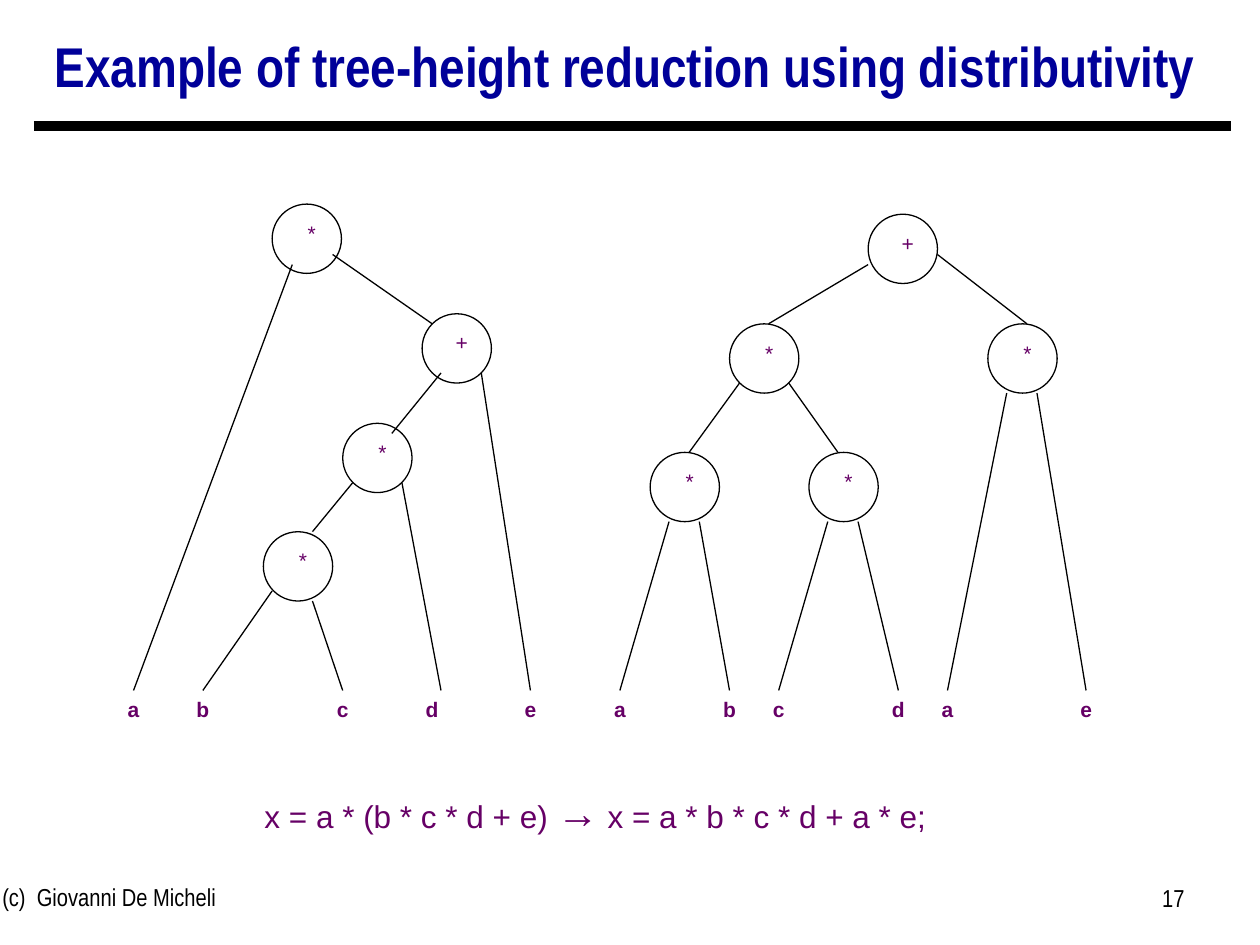
"""Build a slide showing tree-height reduction using distributivity."""
from lxml import etree
from pptx import Presentation, util as u
from pptx.dml.color import RGBColor
from pptx.enum import shapes, text
from pptx.oxml.ns import qn

TITLE = "Example of tree-height reduction using distributivity"
FOOTER = "(c)  Giovanni De Micheli"
PAGE_NUMBER = "17"
FORMULA = [("x = a * (b * c * d + e) ", "formula"), ("→", "arrow"),
           (" x = a * b * c * d + a * e;", "formula")]

OPERATORS = [
    ("*", 2.16, 1.62), ("+", 3.35, 2.49), ("*", 2.72, 3.36), ("*", 2.09, 4.22),
    ("+", 6.89, 1.7), ("*", 5.79, 2.57), ("*", 7.84, 2.57),
    ("*", 5.16, 3.59), ("*", 6.42, 3.59),
]
BRANCHES = [
    ((2.64, 2.02), (3.43, 2.57)), ((3.5, 2.96), (3.11, 3.44)),
    ((2.8, 3.83), (2.48, 4.22)), ((5.87, 3.04), (5.47, 3.59)),
    ((6.26, 3.04), (6.65, 3.59)), ((6.89, 2.1), (6.1, 2.57)),
    ((7.44, 2.02), (8.15, 2.57)),
]
LEAVES = [
    ("a", 1.06, (2.32, 2.1), 1.06), ("b", 1.61, (2.16, 4.69), 1.61),
    ("c", 2.72, (2.48, 4.77), 2.72), ("d", 3.43, (3.19, 3.83), 3.5),
    ("e", 4.21, (3.82, 2.96), 4.21), ("a", 4.92, (5.31, 4.14), 4.92),
    ("b", 5.79, (5.55, 4.14), 5.79), ("c", 6.18, (6.57, 4.14), 6.18),
    ("d", 7.13, (6.81, 4.14), 7.13), ("a", 7.52, (7.99, 3.12), 7.52),
    ("e", 8.62, (8.23, 3.12), 8.62),
]

THEME = {
    "black": RGBColor.from_string("000000"),
    "navy": RGBColor.from_string("000099"),
    "purple": RGBColor.from_string("660066"),
    "rule": 6, "thin": 0.75,
}
STYLES = {
    "title": ("Arial Narrow", 32, "navy", True),
    "footer": ("Arial Narrow", 14, "black", False),
    "operator": ("Arial", 12, "purple", False),
    "leaf": ("Arial", 12, "purple", True),
    "formula": ("Arial", 18, "purple", False),
    "arrow": ("Arial", 24, "purple", False),
}
NODE_SIZE = 0.55
LEAF_TOP, LEAF_WIDTH, LABEL_HEIGHT = 5.48, 0.47, 0.3
CENTER, LEFT, RIGHT = (text.PP_ALIGN.CENTER, text.PP_ALIGN.LEFT,
                       text.PP_ALIGN.RIGHT)


def set_attributes(target, values):
    for name, value in values.items():
        setattr(target, name, value)


def write_runs(paragraph, runs):
    for content, style in runs:
        run = paragraph.add_run()
        run.text = content
        name, size, color, bold = STYLES[style]
        set_attributes(run.font, {"name": name, "size": u.Pt(size), "bold": bold})
        run.font.color.rgb = THEME[color]


def add_text(parent, box, runs, alignment=CENTER):
    shape = parent.add_textbox(*map(u.Inches, box))
    shape.text_frame.word_wrap = True
    paragraph = shape.text_frame.paragraphs[0]
    paragraph.alignment = alignment
    write_runs(paragraph, runs)


def add_line(parent, start, end, width="thin"):
    line = parent.add_connector(shapes.MSO_CONNECTOR.STRAIGHT,
                                *map(u.Inches, start + end))
    line.line.color.rgb = THEME["black"]
    line.line.width = u.Pt(THEME[width])
    etree.SubElement(line._element.spPr, qn("a:effectLst"))


def add_operator(parent, symbol, left, top):
    group = parent.add_group_shape().shapes
    circle = group.add_shape(shapes.MSO_SHAPE.OVAL,
                             *map(u.Inches, (left, top, NODE_SIZE, NODE_SIZE)))
    circle.shadow.inherit = False
    circle.fill.background()
    circle.line.color.rgb = THEME["black"]
    circle.line.width = u.Pt(THEME["thin"])
    add_text(group, (left, top + 0.08, 0.63, LABEL_HEIGHT), [(symbol, "operator")])


def add_title(slide):
    title = slide.shapes.title
    set_attributes(title, {"left": u.Inches(0.3), "top": u.Inches(0),
                           "width": u.Inches(9.33), "height": u.Inches(1.1)})
    set_attributes(title.text_frame, {
        "word_wrap": True, "auto_size": text.MSO_AUTO_SIZE.NONE,
        "vertical_anchor": text.MSO_ANCHOR.MIDDLE})
    paragraph = title.text_frame.paragraphs[0]
    set_attributes(paragraph, {"alignment": CENTER, "line_spacing": 0.9})
    write_runs(paragraph, [(TITLE, "title")])


def main():
    presentation = Presentation()
    set_attributes(presentation, {"slide_width": u.Inches(10),
                                  "slide_height": u.Inches(7.5)})
    slide = presentation.slides.add_slide(presentation.slide_layouts[5])
    canvas = slide.shapes
    add_title(slide)
    add_line(canvas, (0.27, 1), (9.77, 1), "rule")
    add_text(canvas, (-0.08, 6.95, 3.17, 0.52), [(FOOTER, "footer")], LEFT)
    add_text(canvas, (7.17, 6.96, 2.33, 0.52), [(PAGE_NUMBER, "footer")], RIGHT)
    for operator in OPERATORS:
        add_operator(canvas, *operator)
    for start, end in BRANCHES:
        add_line(canvas, start, end)
    for letter, center, start, end in LEAVES:
        add_line(canvas, start, (end, LEAF_TOP))
        add_text(canvas, (center - LEAF_WIDTH / 2, LEAF_TOP, LEAF_WIDTH, LABEL_HEIGHT),
                 [(letter, "leaf")])
    add_text(canvas, (1.3, 6.19, 6.85, 0.5), FORMULA)
    presentation.save("out.pptx")


if __name__ == "__main__":
    main()
